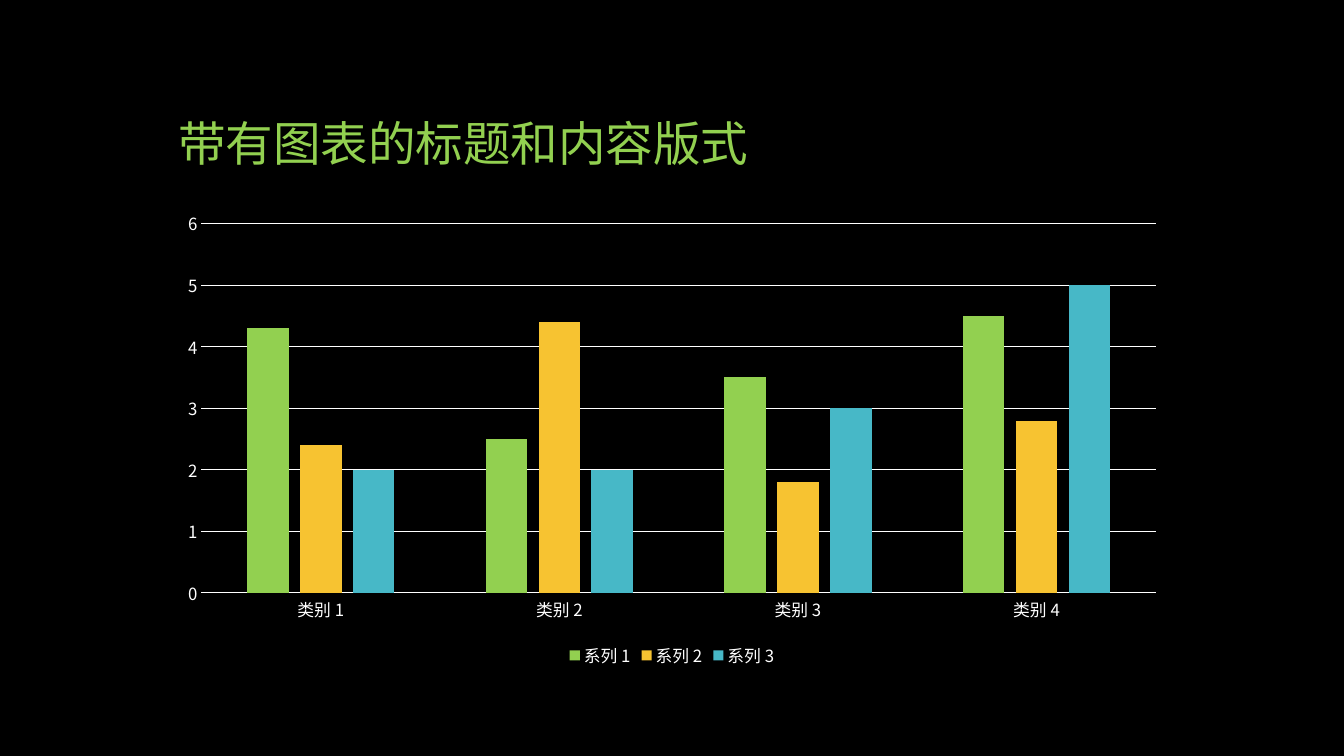
from lxml.etree import Element
from pptx import Presentation
from pptx.chart.data import CategoryChartData
from pptx.dml.color import RGBColor
from pptx.enum.chart import XL_CHART_TYPE, XL_LEGEND_POSITION, XL_TICK_MARK
from pptx.enum.text import MSO_ANCHOR, MSO_AUTO_SIZE, PP_ALIGN
from pptx.oxml.ns import qn
from pptx.util import Pt

BLACK = RGBColor(0x00, 0x00, 0x00)
WHITE = RGBColor(0xFF, 0xFF, 0xFF)
GREEN = RGBColor(0x92, 0xD0, 0x50)
YELLOW = RGBColor(0xF7, 0xC3, 0x31)
TEAL = RGBColor(0x47, 0xB8, 0xC7)
FONT_NAME = "Noto Sans CJK SC"

LEFT, WIDTH = Pt(120), Pt(720)
CATEGORIES = [f"类别 {number}" for number in range(1, 5)]
SERIES = [
    ("系列 1", (4.3, 2.5, 3.5, 4.5), GREEN),
    ("系列 2", (2.4, 4.4, 1.8, 2.8), YELLOW),
    ("系列 3", (2, 2, 3, 5), TEAL),
]


def style_font(font, size, color):
    font.name = FONT_NAME
    font.size = Pt(size)
    font.bold = False
    font.color.rgb = color


def set_east_asian_font(root):
    """Give Chinese characters the same typeface as Latin ones."""
    for latin in list(root.iter(qn("a:latin"))):
        latin.addnext(Element(qn("a:ea"), typeface=FONT_NAME))


def style_line(line, color):
    line.color.rgb = color
    line.width = Pt(0.75)


def style_axis(axis):
    axis.major_tick_mark = XL_TICK_MARK.NONE
    axis.minor_tick_mark = XL_TICK_MARK.NONE
    style_font(axis.tick_labels.font, 12, WHITE)


def fill_title(title, text):
    title.left, title.top, title.width, title.height = LEFT, Pt(36), WIDTH, Pt(90)
    frame = title.text_frame
    frame.text = text
    frame.word_wrap = True
    frame.auto_size = MSO_AUTO_SIZE.NONE
    frame.vertical_anchor = MSO_ANCHOR.BOTTOM
    heading = frame.paragraphs[0]
    heading.alignment = PP_ALIGN.LEFT
    heading.line_spacing = 0.9
    style_font(heading.font, 34, GREEN)
    set_east_asian_font(heading._p)


def add_column_chart(slide):
    chart_data = CategoryChartData()
    chart_data.categories = CATEGORIES
    for name, values, _ in SERIES:
        chart_data.add_series(name, values)
    chart = slide.shapes.add_chart(
        XL_CHART_TYPE.COLUMN_CLUSTERED, LEFT, Pt(144), WIDTH, Pt(336), chart_data
    ).chart
    chart.has_title = False
    style_font(chart.font, 10, WHITE)

    # Columns
    plot = chart.plots[0]
    plot.vary_by_categories = False
    plot.gap_width = 219
    plot.overlap = -27
    for series, (_, _, color) in zip(plot.series, SERIES):
        series.format.fill.solid()
        series.format.fill.fore_color.rgb = color

    # Axes and gridlines
    style_axis(chart.category_axis)
    style_line(chart.category_axis.format.line, WHITE)
    value_axis = chart.value_axis
    style_axis(value_axis)
    value_axis.minimum_scale, value_axis.maximum_scale = 0, 6
    value_axis.major_unit = 1
    value_axis.format.line.fill.background()
    value_axis.has_major_gridlines = True
    style_line(value_axis.major_gridlines.format.line, WHITE)

    # Legend
    chart.has_legend = True
    chart.legend.position = XL_LEGEND_POSITION.BOTTOM
    chart.legend.include_in_layout = False
    style_font(chart.legend.font, 12, WHITE)
    set_east_asian_font(chart._chartSpace)


def main():
    presentation = Presentation()
    presentation.slide_width, presentation.slide_height = Pt(960), Pt(540)
    slide = presentation.slides.add_slide(presentation.slide_layouts[5])
    slide.background.fill.solid()
    slide.background.fill.fore_color.rgb = BLACK
    fill_title(slide.shapes.title, "带有图表的标题和内容版式")
    add_column_chart(slide)
    presentation.save("out.pptx")


if __name__ == "__main__":
    main()
